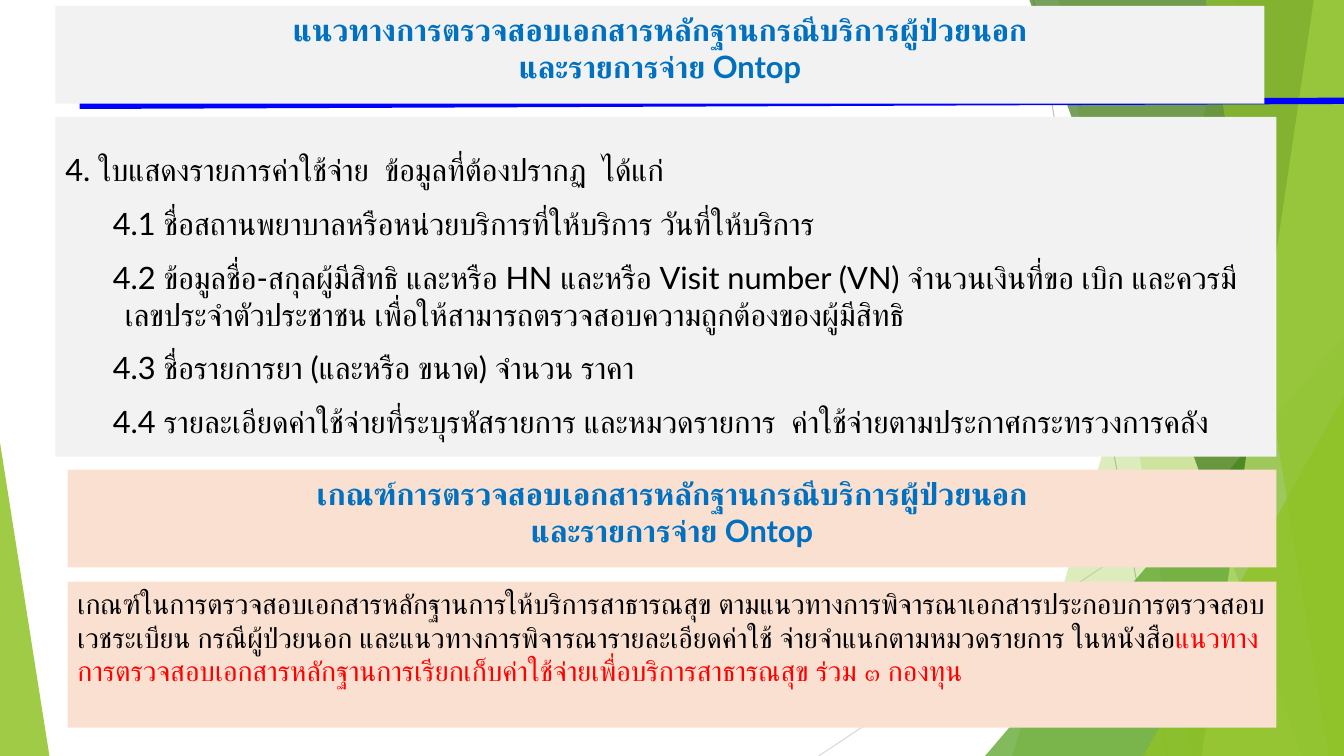
import pptx
import pptx.util
import pptx.dml.color
import pptx.enum.shapes
import pptx.enum.text
import pptx.oxml
import pptx.oxml.ns
from pptx.util import Inches

THEME = {
    "font": "Lato", "body_size": 22, "note_size": 20,
    "text": "000000", "heading": "0070C0", "warning": "FF0000",
    "gray_panel": "F2F2F2", "peach_panel": "FAE0D1", "rule": "0000FF",
    "lime": "90C226", "green": "54A021", "dark_green": "3F7819", "pale_lime": "C0E474",
    "thin_line": "BFBFBF", "faint_line": "D9D9D9",
}
WIDTH, HEIGHT = 13.33, 7.5

presentation = pptx.Presentation()
presentation.slide_width = Inches(WIDTH)
presentation.slide_height = Inches(HEIGHT)
slide = presentation.slides.add_slide(presentation.slide_layouts[6])
shapes = slide.shapes


def paint(shape, color, opacity=100):
    shape.shadow.inherit = False
    shape.fill.solid()
    shape.fill.fore_color.rgb = pptx.dml.color.RGBColor.from_string(color)
    shape.line.fill.background()
    if opacity < 100:
        color_element = shape.fill._xPr.find(".//" + pptx.oxml.ns.qn("a:srgbClr"))
        alpha = pptx.oxml.parse_xml(f'<a:alpha {pptx.oxml.ns.nsdecls("a")} val="{opacity * 1000}"/>')
        color_element.append(alpha)


def add_text(paragraph, text, size=THEME["body_size"], color=THEME["text"], bold=False,
             align=pptx.enum.text.PP_ALIGN.LEFT):
    paragraph.alignment = align
    for index, line in enumerate(text.split("\n")):
        if index:
            paragraph.add_line_break()
        run = paragraph.add_run()
        run.text = line
        run.font.name = THEME["font"]
        run.font.size = pptx.util.Pt(size)
        run.font.bold = bold
        run.font.color.rgb = pptx.dml.color.RGBColor.from_string(color)
        complex_font = pptx.oxml.parse_xml(
            f'<a:cs {pptx.oxml.ns.nsdecls("a")} typeface="{THEME["font"]}"/>')
        run.font._element.append(complex_font)


lines = [
    (10.25, 0, 11.58, HEIGHT, THEME["thin_line"], 0.75),
    (WIDTH, 4.03, 8.12, HEIGHT, THEME["faint_line"], 0.75),
    (0.79, 1.05, WIDTH, 1, THEME["rule"], 4.5),
]
connectors = []
for start_x, start_y, end_x, end_y, color, weight in lines:
    connector = shapes.add_connector(
        pptx.enum.shapes.MSO_CONNECTOR.STRAIGHT,
        Inches(start_x), Inches(start_y), Inches(end_x), Inches(end_y))
    connector.line.color.rgb = pptx.dml.color.RGBColor.from_string(color)
    connector.line.width = pptx.util.Pt(weight)
    connector._element.spPr.append(
        pptx.oxml.parse_xml(f'<a:effectLst {pptx.oxml.ns.nsdecls("a")}/>'))
    connectors.append(connector)

facets = [
    ("band", (12.28, 10.04), THEME["lime"], 30),
    ("band", (10.5, 11.83), THEME["lime"], 20),
    ("triangle", (9.77, 3.33, 3.56, 1), THEME["green"], 72),
    ("band", (10.21, 12.91), THEME["dark_green"], 70),
    ("band", (13.03, 11.92), THEME["pale_lime"], 70),
    ("band", (11.96, 13.18), THEME["lime"], 65),
    ("triangle", (11.34, 3.93, 1.99, 1), THEME["lime"], 80),
    ("triangle", (0, 4.39, 0.49, 0), THEME["lime"], 85),
]
for kind, geometry, color, opacity in facets:
    if kind == "band":
        top_x, bottom_x = geometry
        builder = shapes.build_freeform(Inches(top_x), Inches(0))
        corners = [(WIDTH, 0), (WIDTH, HEIGHT), (bottom_x, HEIGHT)]
        builder.add_line_segments([(Inches(x), Inches(y)) for x, y in corners], close=True)
        facet = builder.convert_to_shape()
    else:
        left, top, width, apex = geometry
        facet = shapes.add_shape(
            pptx.enum.shapes.MSO_SHAPE.ISOSCELES_TRIANGLE,
            Inches(left), Inches(top), Inches(width), Inches(HEIGHT - top))
        facet.adjustments[0] = apex
    paint(facet, color, opacity)

header_rule = connectors[-1]
shapes._spTree.append(header_rule._element)

panels = {
    "details": (0.55, 1.16, 12.11, 3.37, THEME["gray_panel"]),
    "title": (0.55, 0.06, 11.99, 0.97, THEME["gray_panel"]),
    "criteria_title": (0.67, 4.66, 11.99, 0.97, THEME["peach_panel"]),
    "criteria": (0.67, 5.77, 11.99, 1.45, THEME["peach_panel"]),
}
frames = {}
for name, (left, top, width, height, color) in panels.items():
    panel = shapes.add_shape(pptx.enum.shapes.MSO_SHAPE.RECTANGLE,
                             Inches(left), Inches(top), Inches(width), Inches(height))
    paint(panel, color)
    frames[name] = panel.text_frame
    frames[name].word_wrap = True
    frames[name].vertical_anchor = pptx.enum.text.MSO_ANCHOR.TOP

frames["details"].vertical_anchor = pptx.enum.text.MSO_ANCHOR.MIDDLE
frames["details"].margin_top = Inches(0.22)
details = [
    ("4. ใบแสดงรายการค่าใช้จ่าย  ข้อมูลที่ต้องปรากฏ  ได้แก่", 0, 0),
    ("4.1 ชื่อสถานพยาบาลหรือหน่วยบริการที่ให้บริการ วันที่ให้บริการ", 0.47, 0),
    ("4.2 ข้อมูลชื่อ-สกุลผู้มีสิทธิ และหรือ HN และหรือ Visit number (VN) จำนวนเงินที่ขอ เบิก "
     "และควรมีเลขประจำตัวประชาชน เพื่อให้สามารถตรวจสอบความถูกต้องของผู้มีสิทธิ", 0.59, -0.12),
    ("4.3 ชื่อรายการยา (และหรือ ขนาด) จำนวน ราคา", 0.47, 0),
    ("4.4 รายละเอียดค่าใช้จ่ายที่ระบุรหัสรายการ และหมวดรายการ  "
     "ค่าใช้จ่ายตามประกาศกระทรวงการคลัง", 0.47, 0),
]
for index, (text, margin, indent) in enumerate(details):
    if index:
        paragraph = frames["details"].add_paragraph()
        paragraph.space_before = pptx.util.Pt(12)
    else:
        paragraph = frames["details"].paragraphs[0]
    properties = paragraph._p.get_or_add_pPr()
    properties.set("marL", str(Inches(margin)))
    properties.set("indent", str(Inches(indent)))
    add_text(paragraph, text)

headings = {
    "title": "แนวทางการตรวจสอบเอกสารหลักฐานกรณีบริการผู้ป่วยนอก\nและรายการจ่าย Ontop",
    "criteria_title": "เกณฑ์การตรวจสอบเอกสารหลักฐานกรณีบริการผู้ป่วยนอก\nและรายการจ่าย Ontop",
}
for name, text in headings.items():
    add_text(frames[name].paragraphs[0], text, color=THEME["heading"], bold=True,
             align=pptx.enum.text.PP_ALIGN.CENTER)

criteria = [
    ("เกณฑ์ในการตรวจสอบเอกสารหลักฐานการให้บริการสาธารณสุข "
     "ตามแนวทางการพิจารณาเอกสารประกอบการตรวจสอบเวชระเบียน กรณีผู้ป่วยนอก "
     "และแนวทางการพิจารณารายละเอียดค่าใช้ จ่ายจำแนกตามหมวดรายการ ในหนังสือ", THEME["text"]),
    ("แนวทางการตรวจสอบเอกสารหลักฐานการเรียกเก็บค่าใช้จ่ายเพื่อบริการสาธารณสุข "
     "ร่วม ๓ กองทุน", THEME["warning"]),
]
for text, color in criteria:
    add_text(frames["criteria"].paragraphs[0], text, size=THEME["note_size"], color=color)

presentation.save("out.pptx")
